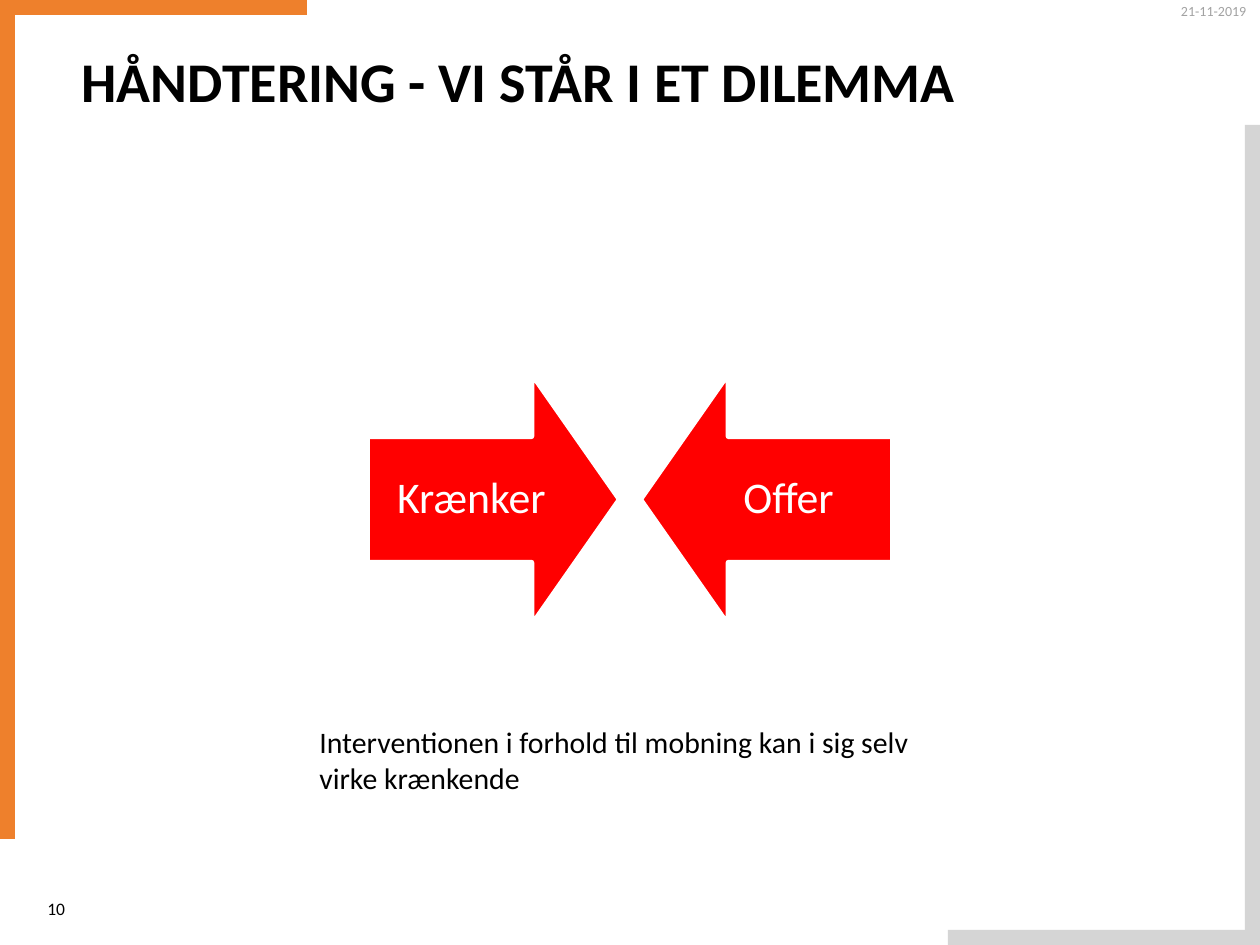
"""Build the dilemma slide with two facing arrows."""
from dataclasses import dataclass
from pptx import Presentation
from pptx.dml.color import RGBColor as Rgb
from pptx.enum.shapes import MSO_SHAPE as Kind
from pptx.enum.text import MSO_ANCHOR as Anchor, PP_ALIGN as Align
from pptx.util import Emu, Pt


@dataclass(frozen=True)
class Theme:
    face: str = "Calibri"
    ink: str = "000000"
    pale: str = "FFFFFF"
    date: str = "A2A2A2"
    gray: str = "D5D5D5"
    warm: str = "EE802C"
    red: str = "FF0000"
    head: int = 32
    label: int = 25
    body: int = 17
    page: int = 10
    small: int = 8
    edge: float = 3.35


def px(num):
    return Emu(round(num * 914400 / 126))


def assign(item, vals):
    for key, val in vals.items():
        setattr(item, key, val)


class Deck:
    def __init__(self, theme, wide, high):
        self.theme = theme
        self.prs = Presentation()
        assign(self.prs, {"slide_width": px(wide), "slide_height": px(high)})
        self.slide = self.prs.slides.add_slide(self.prs.slide_layouts[6])

    def label(self, shape, text, size, color, align=Align.LEFT, anchor=Anchor.TOP, bold=False):
        frame = shape.text_frame
        assign(frame, {"word_wrap": True, "vertical_anchor": anchor})
        para = frame.paragraphs[0]
        para.alignment = align
        run = para.add_run()
        run.text = text
        assign(run.font, {"name": self.theme.face, "size": Pt(size), "bold": bold})
        run.font.color.rgb = Rgb.from_string(color)
        return frame

    def text(self, box, text, size, color, **style):
        shape = self.slide.shapes.add_textbox(*map(px, box))
        self.label(shape, text, size, color, **style)

    def shape(self, kind, box, color):
        shape = self.slide.shapes.add_shape(kind, *map(px, box))
        shape.shadow.inherit = False
        shape.fill.solid()
        shape.fill.fore_color.rgb = Rgb.from_string(color)
        shape.line.fill.background()
        return shape

    def bar(self, box, color):
        self.shape(Kind.RECTANGLE, box, color)

    def arrow(self, kind, box, text):
        look = self.theme
        shape = self.shape(kind, box, look.red)
        shape.adjustments[0], shape.adjustments[1] = 0.5, 0.35
        shape.line.color.rgb = Rgb.from_string(look.pale)
        shape.line.width = Pt(look.edge)
        frame = self.label(shape, text, look.label, look.pale, Align.CENTER, Anchor.MIDDLE)
        frame.paragraphs[0].line_spacing = 0.9
        sides = ("left", "right", "top", "bottom")
        assign(frame, {f"margin_{side}": px(24) for side in sides})

    def save(self):
        self.prs.save("out.pptx")


def main():
    look = Theme()
    wide, high, thick, span = 1260, 945, 15, 297
    deck = Deck(look, wide, high)
    deck.bar((wide - thick, 125, thick, high - 125), look.gray)
    deck.bar((0, 0, thick, 839), look.warm)
    deck.bar((10, 0, span, thick), look.warm)
    deck.bar((wide - thick - span, high - thick, span, thick), look.gray)
    deck.text((35, 887, 136, 42), "10", look.page, look.ink, anchor=Anchor.MIDDLE)
    deck.text((1137, -4, 122, 30), "21-11-2019", look.small, look.date, align=Align.RIGHT)
    deck.text((307, 718, 645, 84),
              "Interventionen i forhold til mobning kan i sig selv virke krænkende",
              look.body, look.ink)
    deck.text((69, 40, 1120, 97), "HÅNDTERING - VI STÅR I ET DILEMMA",
              look.head, look.ink, bold=True)
    side, gap = 253, 20
    left = (wide - gap) // 2 - side
    pair = ((Kind.RIGHT_ARROW, "Krænker"), (Kind.LEFT_ARROW, "Offer"))
    for num, (kind, text) in enumerate(pair):
        deck.arrow(kind, (left + num * (side + gap), 373, side, side), text)
    deck.save()


if __name__ == "__main__":
    main()
